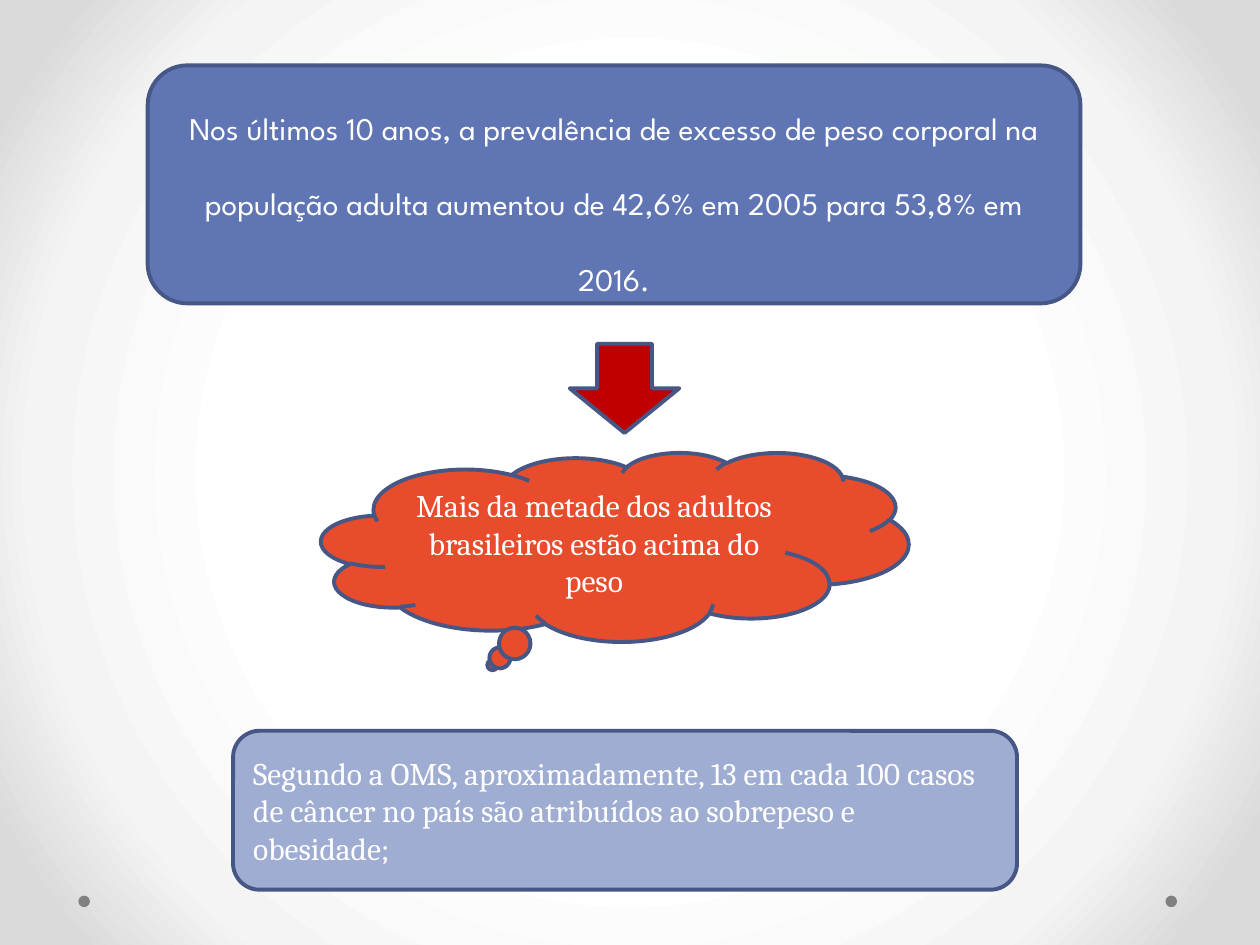
from dataclasses import dataclass

from pptx import Presentation
from pptx.dml.color import RGBColor
from pptx.enum.shapes import MSO_SHAPE as Shape
from pptx.enum.text import MSO_ANCHOR as Anchor, PP_ALIGN as Align
from pptx.oxml import parse_xml
from pptx.oxml.ns import nsdecls, qn
from pptx.util import Pt


@dataclass(frozen=True)
class Theme:
    blue: str = "6076B4"
    pale_blue: str = "A0ADD2"
    orange: str = "E74C2D"
    red: str = "C00000"
    outline: str = "475785"
    dot: str = "808080"
    text: str = "FFFFFF"
    glow: tuple = ((50, "FFFFFF"), (76, "F4F4F4"), (92, "DADADA"))
    serif: str = "Cambria"
    sans: str = "League Spartan"
    size: float = 18
    line_width: float = 2.25


THEME = Theme()


def set_background(s):
    """Fill the slide with a circular gradient spreading from its centre."""
    s.background.fill.gradient()
    grad = s.element.find(".//" + qn("a:gradFill"))
    stops = "".join(
        f'<a:gs pos="{pos * 1000}"><a:srgbClr val="{color}"/></a:gs>'
        for pos, color in THEME.glow
    )
    grad.getparent().replace(grad, parse_xml(
        f'<a:gradFill {nsdecls("a")} rotWithShape="1"><a:gsLst>{stops}</a:gsLst>'
        '<a:path path="circle"><a:fillToRect l="50000" t="50000" r="50000" b="50000"/>'
        '</a:path></a:gradFill>'
    ))


def add_shape(s, kind, box, fill, outline=None):
    sp = s.shapes.add_shape(kind, *map(Pt, box))
    sp.shadow.inherit = False
    sp.fill.solid()
    sp.fill.fore_color.rgb = RGBColor.from_string(fill)
    if outline:
        sp.line.color.rgb = RGBColor.from_string(outline)
        sp.line.width = Pt(THEME.line_width)
    else:
        sp.line.fill.background()
    return sp


def write_text(sp, text, font=THEME.serif, align=Align.CENTER, spacing=None):
    tf = sp.text_frame
    tf.word_wrap = True
    tf.vertical_anchor = Anchor.MIDDLE
    p = tf.paragraphs[0]
    p.alignment = align
    p.line_spacing = spacing
    r = p.add_run()
    r.text = text
    r.font.name = font
    r.font.size = Pt(THEME.size)
    r.font.color.rgb = RGBColor.from_string(THEME.text)


def main():
    prs = Presentation()
    prs.slide_width, prs.slide_height = Pt(720), Pt(540)
    s = prs.slides.add_slide(prs.slide_layouts[6])
    set_background(s)

    for left in (666, 44.8):
        add_shape(s, Shape.OVAL, (left, 511.8, 6.6, 6.6), THEME.dot)

    prevalence = add_shape(s, Shape.ROUNDED_RECTANGLE, (84.4, 37.4, 533, 136),
                           THEME.blue, THEME.outline)
    write_text(prevalence,
               "Nos últimos 10 anos, a prevalência de excesso de peso corporal na "
               "população adulta aumentou de 42,6% em 2005 para 53,8% em 2016.",
               font=THEME.sans, spacing=2.0)

    add_shape(s, Shape.DOWN_ARROW, (325.6, 196.4, 62.6, 51), THEME.red, THEME.outline)

    conclusion = add_shape(s, Shape.CLOUD_CALLOUT, (183.6, 258.5, 335.6, 108),
                           THEME.orange, THEME.outline)
    write_text(conclusion, "Mais da metade dos adultos brasileiros estão acima do peso")

    cancer = add_shape(s, Shape.ROUNDED_RECTANGLE, (133.2, 417.6, 448, 90.8),
                       THEME.pale_blue, THEME.outline)
    write_text(cancer,
               "Segundo a OMS, aproximadamente, 13 em cada 100 casos de câncer no país "
               "são atribuídos ao sobrepeso e obesidade;",
               align=Align.LEFT)

    prs.save("out.pptx")


if __name__ == "__main__":
    main()
